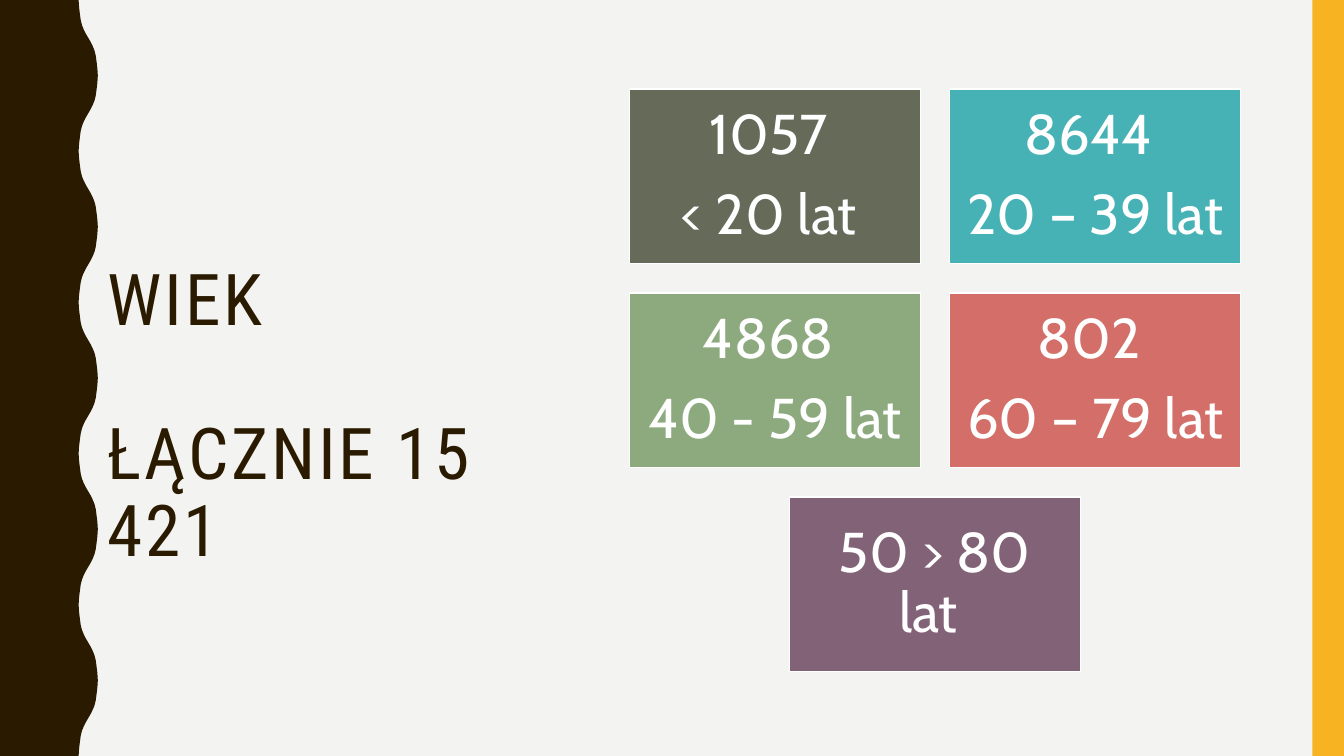
from dataclasses import dataclass

from pptx import Presentation
from pptx import util as u
from pptx.dml.color import RGBColor
from pptx.enum import shapes, text

SLIDE_W, SLIDE_H = 960, 540
BROWN, YELLOW, WHITE, PAPER = "2A1A00", "F8B323", "FFFFFF", "F3F3F2"

# Wave edge: the first quarter of one wave as (x, y) from its trough
WAVE_LEFT, WAVE_DEPTH, WAVE_LENGTH = 56.2, 13.7, 108
QUARTER = [(0, 0), (0.3, 5), (0.9, 10), (1.5, 14.4),
           (2.4, 18), (3.6, 21), (5.1, 24), (6.85, 27)]

# Age cards: two per row, a short last row is centred
CARD_LEFT, CARD_TOP = 449.5, 63.5
CARD_W, CARD_H, GAP = 207.9, 124.8, 20.9
PER_ROW = 2


@dataclass
class AgeCard:
    lines: list[str]
    fill: str


CARDS = [
    AgeCard(["1057 ", "< 20 lat "], "656A59"),
    AgeCard(["8644 ", "20 – 39 lat "], "46B2B5"),
    AgeCard(["4868 ", "40 - 59 lat"], "8CAA7E"),
    AgeCard(["802 ", "60 – 79 lat "], "D36F68"),
    AgeCard(["50 > 80 lat "], "826276"),
]


def rgb(value: str) -> RGBColor:
    return RGBColor.from_string(value)


def apply(target, values: dict) -> None:
    for name, value in values.items():
        setattr(target, name, value)


def paint(shape, fill: str, line: str | None = None) -> None:
    shape.shadow.inherit = False
    shape.fill.solid()
    shape.fill.fore_color.rgb = rgb(fill)
    if line:
        shape.line.color.rgb = rgb(line)
        shape.line.width = u.Pt(1)
    else:
        shape.line.fill.background()


def write(frame, lines: list[str], frame_format: dict, paragraph_format: dict,
          font_format: dict, color: str) -> None:
    apply(frame, frame_format)
    frame.text = "\n".join(lines)
    for paragraph in frame.paragraphs:
        apply(paragraph, paragraph_format)
        for run in paragraph.runs:
            apply(run.font, font_format)
            run.font.color.rgb = rgb(color)


def draw_wave(slide) -> None:
    half = QUARTER + [(WAVE_DEPTH - x, WAVE_LENGTH / 2 - y)
                      for x, y in QUARTER[-2::-1]]
    wave = half + [(x, WAVE_LENGTH - y) for x, y in half[-2::-1]]
    edge = [(WAVE_LEFT + x, start + y)
            for start in range(0, SLIDE_H, WAVE_LENGTH) for x, y in wave]
    builder = slide.shapes.build_freeform(0, 0, scale=u.Pt(1))
    outline = edge + [(0, SLIDE_H)]
    # Scale in hundredths keeps the curve smooth
    builder = slide.shapes.build_freeform(0, 0, scale=u.Pt(1) / 100)
    builder.add_line_segments([(x * 100, y * 100) for x, y in outline], close=True)
    paint(builder.convert_to_shape(), BROWN)


def draw_bar(slide) -> None:
    bar_left = 937.5
    bar = slide.shapes.add_shape(shapes.MSO_SHAPE.RECTANGLE, u.Pt(bar_left), 0,
                                 u.Pt(SLIDE_W - bar_left), u.Pt(SLIDE_H))
    paint(bar, YELLOW)


def draw_title(slide) -> None:
    title = slide.shapes.add_textbox(u.Pt(70), u.Pt(185), u.Pt(348.5), u.Pt(193.7))
    write(title.text_frame, ["WIEK", "ŁĄCZNIE 15 421"],
          {"word_wrap": True, "vertical_anchor": text.MSO_ANCHOR.TOP},
          {"line_spacing": 0.9},
          {"name": "Roboto Condensed", "size": u.Pt(51)}, BROWN)
    total = title.text_frame.paragraphs[1]
    total.space_before = u.Pt(55)
    for paragraph in title.text_frame.paragraphs:
        for run in paragraph.runs:
            run.font._element.set("spc", "200")


def draw_card(slide, index: int, card: AgeCard) -> None:
    row, column = divmod(index, PER_ROW)
    in_row = min(PER_ROW, len(CARDS) - row * PER_ROW)
    shift = column + (PER_ROW - in_row) / 2
    box = slide.shapes.add_shape(
        shapes.MSO_SHAPE.RECTANGLE,
        u.Pt(CARD_LEFT + shift * (CARD_W + GAP)),
        u.Pt(CARD_TOP + row * (CARD_H + GAP)), u.Pt(CARD_W), u.Pt(CARD_H))
    paint(box, card.fill, WHITE)
    margins = {f"margin_{side}": u.Pt(12) for side in ("left", "right", "top", "bottom")}
    write(box.text_frame, card.lines,
          {"word_wrap": True, "vertical_anchor": text.MSO_ANCHOR.MIDDLE, **margins},
          {"alignment": text.PP_ALIGN.CENTER, "line_spacing": 0.9,
           "space_after": u.Pt(14)},
          {"name": "Cabin", "size": u.Pt(40)}, WHITE)


def main() -> None:
    deck = Presentation()
    apply(deck, {"slide_width": u.Pt(SLIDE_W), "slide_height": u.Pt(SLIDE_H)})
    slide = deck.slides.add_slide(deck.slide_layouts[6])
    slide.background.fill.solid()
    slide.background.fill.fore_color.rgb = rgb(PAPER)

    draw_wave(slide)
    draw_bar(slide)
    draw_title(slide)
    for index, card in enumerate(CARDS):
        draw_card(slide, index, card)
    deck.save("out.pptx")


if __name__ == "__main__":
    main()
